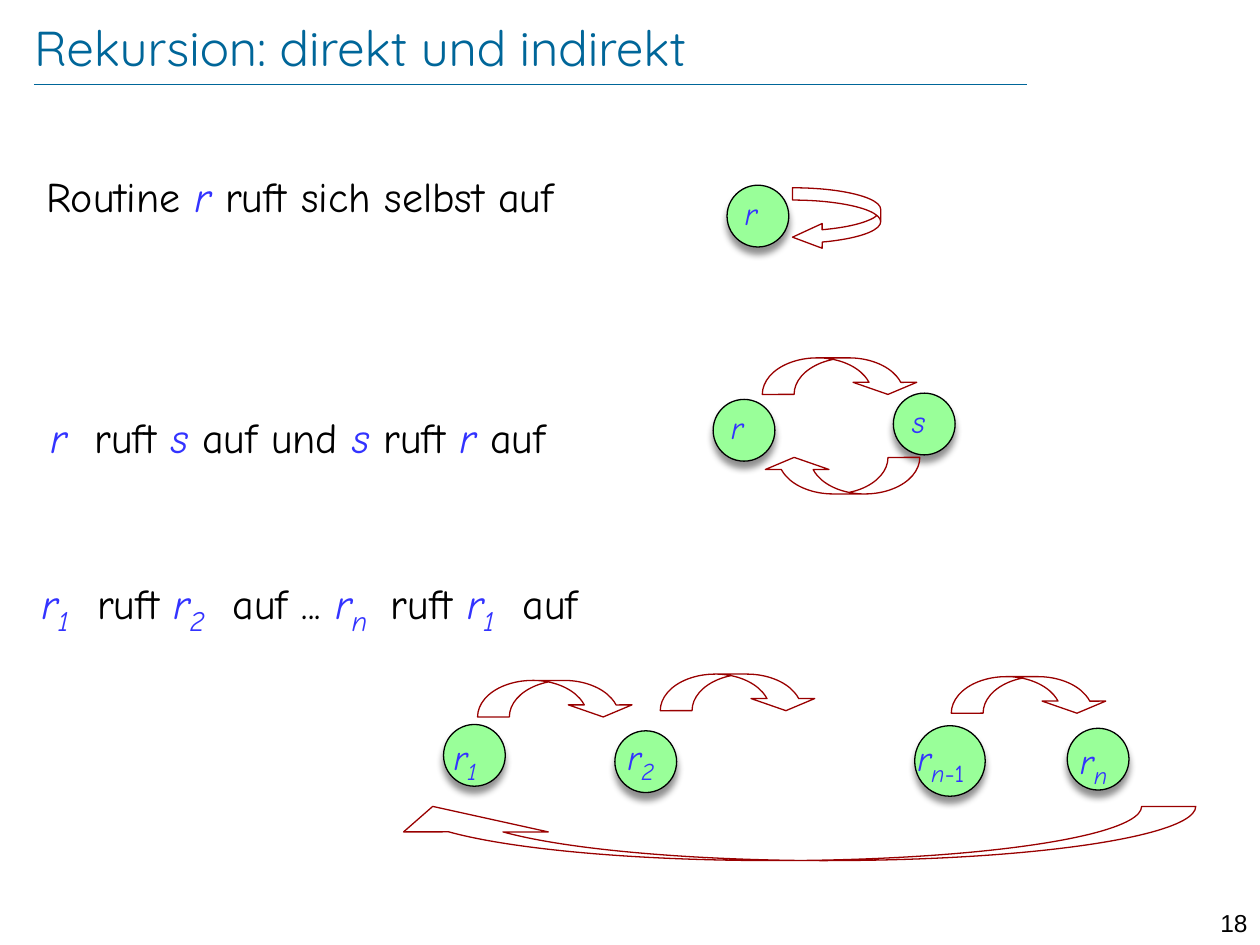
from lxml import etree
from pptx import Presentation
from pptx.dml.color import RGBColor
from pptx.enum.shapes import MSO_CONNECTOR, MSO_SHAPE
from pptx.enum.text import MSO_ANCHOR, PP_ALIGN
from pptx.oxml import parse_xml
from pptx.oxml.ns import nsdecls, qn
from pptx.util import Inches, Pt

BLACK = RGBColor(0x00, 0x00, 0x00)
TEAL = RGBColor(0x00, 0x66, 0x99)
BLUE = RGBColor(0x33, 0x33, 0xFF)
GREEN = RGBColor(0x99, 0xFF, 0x99)
DARK_RED = RGBColor(0x99, 0x00, 0x00)

# Run styles: colour, italic, subscript
PLAIN = (BLACK, False, False)
TITLE = (TEAL, False, False)
NAME = (BLUE, True, False)
INDEX = (BLUE, True, True)
UPRIGHT_INDEX = (BLUE, False, True)

NODE_SHADOW = (
    f'<a:effectLst {nsdecls("a")}><a:outerShdw blurRad="50800" dist="50800" '
    'dir="5400000" algn="ctr" rotWithShape="0"><a:srgbClr val="000000">'
    '<a:alpha val="43000"/></a:srgbClr></a:outerShdw></a:effectLst>'
)

presentation = Presentation()
presentation.slide_width = Inches(10)
presentation.slide_height = Inches(7.5)
slide = presentation.slides.add_slide(presentation.slide_layouts[6])


def add_text(box, runs, size, font="Comic Neue", inset=True):
    """Add a text box; subscripts are set 4 pt larger than the base size."""
    text_box = slide.shapes.add_textbox(*map(Inches, box))
    frame = text_box.text_frame
    frame.word_wrap = True
    if not inset:
        frame.margin_left = frame.margin_right = 0
        frame.margin_top = frame.margin_bottom = 0
    paragraph = frame.paragraphs[0]
    for text, (color, italic, subscript) in runs:
        run = paragraph.add_run()
        run.text = text
        run.font.name = font
        run.font.size = Pt(size + 4 if subscript else size)
        run.font.italic = italic
        run.font.color.rgb = color
        if subscript:
            run.font._element.set("baseline", "-25000")
    return frame


def add_arrow(kind, box, adjustments, rotation=0):
    """Add an unfilled curved arrow."""
    arrow = slide.shapes.add_shape(kind, *map(Inches, box))
    for index, value in enumerate(adjustments):
        arrow.adjustments[index] = value
    arrow.rotation = rotation
    arrow.shadow.inherit = False
    arrow.fill.background()
    arrow.line.color.rgb = DARK_RED
    arrow.line.width = Pt(0.75)


# Title with rule, and slide number
rule = slide.shapes.add_connector(
    MSO_CONNECTOR.STRAIGHT, Inches(0.27), Inches(0.67), Inches(8.15), Inches(0.67)
)
rule.line.color.rgb = TEAL
rule.line.width = Pt(0.25)
etree.SubElement(rule._element.spPr, qn("a:effectLst"))

title = add_text((0.27, 0.13, 8.69, 0.48), [("Rekursion: direkt und indirekt", TITLE)],
                 28, "Quicksand", inset=False)
title.vertical_anchor = MSO_ANCHOR.MIDDLE

number = add_text((9.45, 7.16, 0.55, 0.24), [("18", PLAIN)], 14, "Arial")
number.paragraphs[0].alignment = PP_ALIGN.RIGHT

# The three kinds of recursion
add_text((0.27, 1.3, 5.07, 0.61),
         [("Routine ", PLAIN), ("r", NAME), (" ruft sich selbst auf", PLAIN)], 24)
add_text((0.3, 3.22, 5.04, 0.84),
         [("r", NAME), ("  ruft ", PLAIN), ("s", NAME), (" auf und ", PLAIN),
          ("s", NAME), (" ruft ", PLAIN), ("r ", NAME), ("auf", PLAIN)], 24)
add_text((0.23, 4.48, 5.26, 0.68),
         [("r", NAME), ("1", INDEX), ("  ruft ", PLAIN),
          ("r", NAME), ("2", INDEX), ("  auf ... ", PLAIN),
          ("r", NAME), ("n ", INDEX), (" ruft ", PLAIN),
          ("r", NAME), ("1", INDEX), ("  auf", PLAIN)], 24)

# Routine nodes: left, top, diameter, label box, label size, label runs
nodes = [
    (5.77, 1.47, 0.49, (5.91, 1.54, 0.26, 0.36), 18, [("r", NAME)]),
    (5.66, 3.17, 0.49, (5.8, 3.24, 0.26, 0.36), 18, [("r", NAME)]),
    (7.09, 3.12, 0.49, (7.24, 3.19, 0.26, 0.36), 18, [("s", NAME)]),
    (3.52, 5.75, 0.49, (3.6, 5.78, 0.33, 0.36), 20, [("r", NAME), ("1", INDEX)]),
    (4.88, 5.8, 0.49, (4.98, 5.78, 0.33, 0.36), 20, [("r", NAME), ("2", INDEX)]),
    (7.26, 5.76, 0.56, (7.28, 5.79, 0.55, 0.36), 20,
     [("r", NAME), ("n", INDEX), ("-1", UPRIGHT_INDEX)]),
    (8.47, 5.78, 0.49, (8.57, 5.81, 0.55, 0.36), 20, [("r", NAME), ("n", INDEX)]),
]
for left, top, diameter, label_box, label_size, label in nodes:
    node = slide.shapes.add_shape(MSO_SHAPE.OVAL, Inches(left), Inches(top),
                                  Inches(diameter), Inches(diameter))
    node.fill.solid()
    node.fill.fore_color.rgb = GREEN
    node.line.color.rgb = BLACK
    node.line.width = Pt(0.75)
    node._element.spPr.append(parse_xml(NODE_SHADOW))
    add_text(label_box, label, label_size, inset=False)

# Call arrows: to itself, to the next routine, and back
add_arrow(MSO_SHAPE.CURVED_LEFT_ARROW, (6.29, 1.49, 0.7, 0.49), (0.2, 0.4, 0.48))
for left, top, rotation in [(6.05, 2.84, 0), (6.05, 3.63, 180),
                            (3.79, 5.4, 0), (5.24, 5.35, 0), (7.55, 5.37, 0)]:
    add_arrow(MSO_SHAPE.CURVED_DOWN_ARROW, (left, top, 1.25, 0.29),
              (0.87, 1.74, 0.33), rotation)
add_arrow(MSO_SHAPE.CURVED_DOWN_ARROW, (2.86, 6.4, 6.63, 0.43), (5.06, 2.67, 0.47), 180)

presentation.save("out.pptx")
